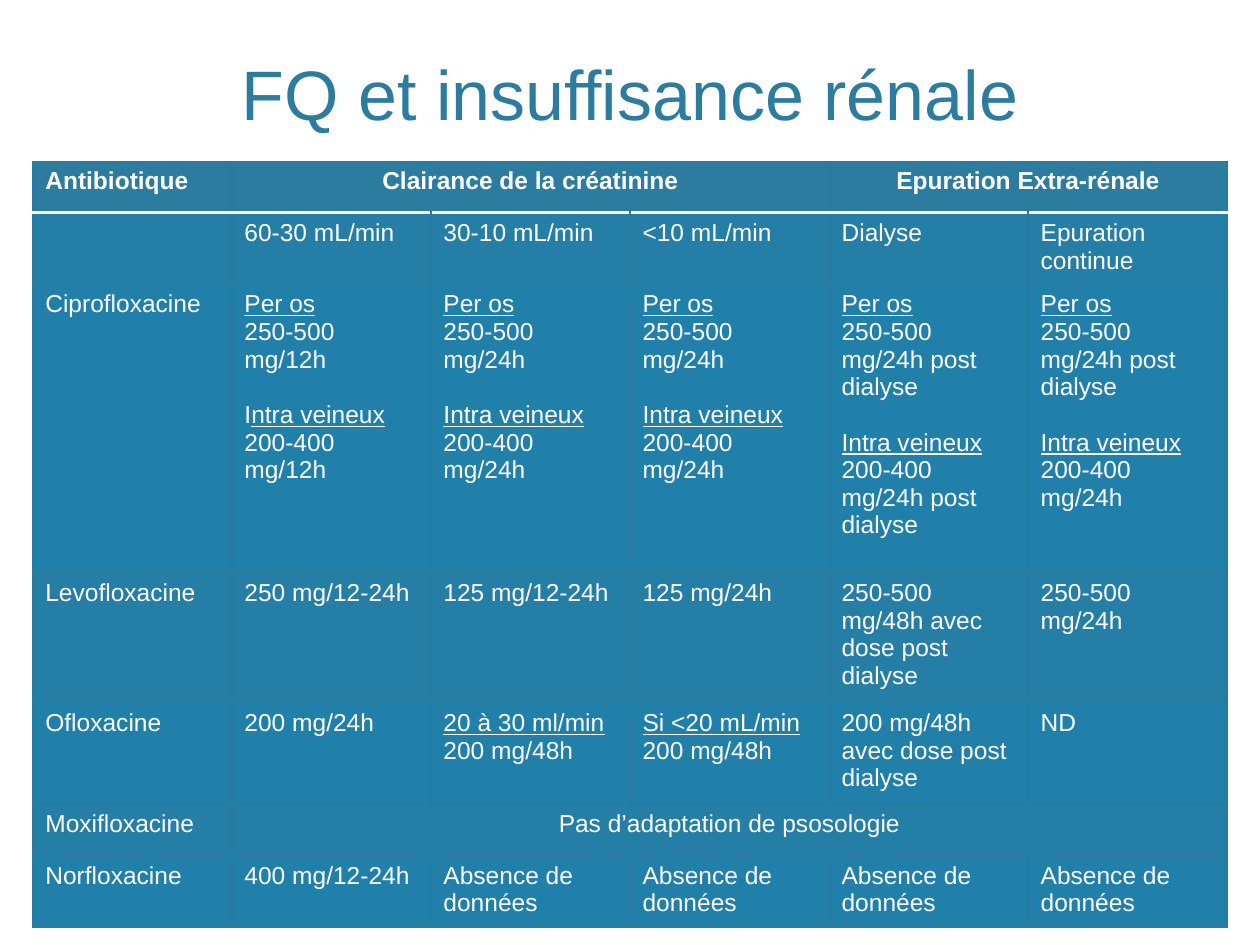
from dataclasses import dataclass
from typing import Any

from lxml.etree import SubElement
from pptx import Presentation
from pptx.dml.color import RGBColor
from pptx.enum.text import MSO_ANCHOR, PP_ALIGN
from pptx.oxml.ns import qn
from pptx.util import Inches, Pt

COLORS = {
    "title": "2C7C9F",
    "header": "2C7C9F",
    "band": "257EA6",
    "plain": "2080AA",
    "grid": "287A9E",
    "text": "FFFFFF",
}
TITLE_FONT = {"name": "Arial", "size": Pt(40)}
CELL_FONT = {"name": "Arial", "size": Pt(14)}
TABLE_FLAGS = {"first_row": True, "horz_banding": False}
COLUMN_WIDTH = 1.58


@dataclass(frozen=True)
class Line:
    text: str
    underline: bool = False
    lead: str = ""
    gap: float = 0


@dataclass(frozen=True)
class Entry:
    lines: tuple[Line, ...]
    span: int = 1


@dataclass(frozen=True)
class Row:
    height: float
    entries: tuple[Entry, ...]
    fill: str = "plain"
    bold: bool = False


def plain(text: str, span: int = 1) -> Entry:
    """Return an entry holding one ordinary line."""
    return Entry((Line(text),) if text else (), span)


def headed(heading: str, dose: str) -> Entry:
    """Return an entry with an underlined heading over a dose."""
    return Entry((Line(heading, True), Line(dose)))


def routes(oral: str, intravenous: str, lead: str = "") -> Entry:
    """Return the oral and intravenous doses of one column."""
    heading = Line("Intra veineux".removeprefix(lead), True, lead, 16)
    return Entry(headed("Per os", oral).lines + (heading, Line(intravenous)))


def plain_row(*texts: str) -> tuple[Entry, ...]:
    """Return one ordinary entry for each text."""
    return tuple(plain(text) for text in texts)


ROWS = (
    Row(0.41, (plain("Antibiotique"), plain("Clairance de la créatinine", 3),
               plain("Epuration Extra-rénale", 2)), "header", True),
    Row(0.54, plain_row("", "60-30 mL/min", "30-10 mL/min", "<10 mL/min",
                        "Dialyse", "Epuration continue"), "band"),
    Row(2.29, (
        plain("Ciprofloxacine"),
        routes("250-500 mg/12h", "200-400 mg/12h", "I"),
        *[routes("250-500 mg/24h", "200-400 mg/24h")] * 2,
        routes("250-500 mg/24h post dialyse", "200-400 mg/24h post dialyse"),
        routes("250-500 mg/24h post dialyse", "200-400 mg/24h"),
    )),
    Row(0.98, plain_row("Levofloxacine", "250 mg/12-24h", "125 mg/12-24h", "125 mg/24h",
                        "250-500 mg/48h avec dose post dialyse", "250-500 mg/24h"), "band"),
    Row(0.75, (
        *plain_row("Ofloxacine", "200 mg/24h"),
        headed("20 à 30 ml/min", "200 mg/48h"),
        headed("Si <20 mL/min", "200 mg/48h"),
        *plain_row("200 mg/48h avec dose post dialyse", "ND"),
    )),
    Row(0.41, (plain("Moxifloxacine"), plain("Pas d’adaptation de psosologie", 5)), "band"),
    Row(0.55, plain_row("Norfloxacine", "400 mg/12-24h", *["Absence de données"] * 4)),
)


def apply_format(target: Any, values: dict[str, Any]) -> None:
    """Set every named attribute on the target."""
    for name, value in values.items():
        setattr(target, name, value)


def add_run(paragraph: Any, text: str, color: str, values: dict[str, Any]) -> None:
    """Append a formatted run to a paragraph."""
    run = paragraph.add_run()
    run.text = text
    apply_format(run.font, values)
    run.font.color.rgb = RGBColor.from_string(COLORS[color])


def add_border(cell: Any, side: str, color: str, points: float) -> None:
    """Add a solid border to one side of a cell."""
    border = SubElement(cell._tc.get_or_add_tcPr(), qn(f"a:ln{side}"), w=str(Pt(points)))
    SubElement(SubElement(border, qn("a:solidFill")), qn("a:srgbClr"), val=COLORS[color])


def dress_cell(cell: Any, fill: str, row_index: int) -> None:
    """Draw the borders and the fill of a cell."""
    header_edge = {(0, "B"), (1, "T")}
    for side in "LRTB":
        edge = ("text", 2) if (row_index, side) in header_edge else ("grid", 1)
        add_border(cell, side, *edge)
    cell.fill.solid()
    cell.fill.fore_color.rgb = RGBColor.from_string(COLORS[fill])


def write_entry(cell: Any, entry: Entry, bold: bool) -> None:
    """Write the lines of an entry into a cell."""
    for index, line in enumerate(entry.lines):
        frame = cell.text_frame
        paragraph = frame.add_paragraph() if index else frame.paragraphs[0]
        paragraph.alignment = PP_ALIGN.CENTER if entry.span > 1 else PP_ALIGN.LEFT
        if line.gap:
            paragraph.space_before = Pt(line.gap)
        for text, underline in ((line.lead, False), (line.text, line.underline)):
            if text:
                add_run(paragraph, text, "text", CELL_FONT | {"bold": bold, "underline": underline})


def add_title(slide: Any, text: str) -> None:
    """Add the centred slide title."""
    box = slide.shapes.add_textbox(Inches(0.6), Inches(0.12), Inches(8.8), Inches(1))
    apply_format(box.text_frame, {"word_wrap": True, "vertical_anchor": MSO_ANCHOR.BOTTOM})
    paragraph = box.text_frame.paragraphs[0]
    paragraph.alignment = PP_ALIGN.CENTER
    add_run(paragraph, text, "title", TITLE_FONT)


def add_dose_table(slide: Any, rows: tuple[Row, ...]) -> None:
    """Add the table of doses by renal function."""
    column_count = sum(entry.span for entry in rows[0].entries)
    table = slide.shapes.add_table(
        len(rows), column_count, Inches(0.26), Inches(1.28),
        Inches(COLUMN_WIDTH * column_count), Inches(sum(row.height for row in rows)),
    ).table
    apply_format(table, TABLE_FLAGS)
    for column in table.columns:
        column.width = Inches(COLUMN_WIDTH)
    for row_index, row in enumerate(rows):
        table.rows[row_index].height = Inches(row.height)
        for cell in table.rows[row_index].cells:
            dress_cell(cell, row.fill, row_index)
        column_index = 0
        for entry in row.entries:
            cell = table.cell(row_index, column_index)
            if entry.span > 1:
                cell.merge(table.cell(row_index, column_index + entry.span - 1))
            write_entry(cell, entry, row.bold)
            column_index += entry.span


def main() -> None:
    """Build and save the slide."""
    presentation = Presentation()
    apply_format(presentation, {"slide_width": Inches(10), "slide_height": Inches(7.5)})
    slide = presentation.slides.add_slide(presentation.slide_layouts[6])
    add_title(slide, "FQ et insuffisance rénale")
    add_dose_table(slide, ROWS)
    presentation.save("out.pptx")


if __name__ == "__main__":
    main()
